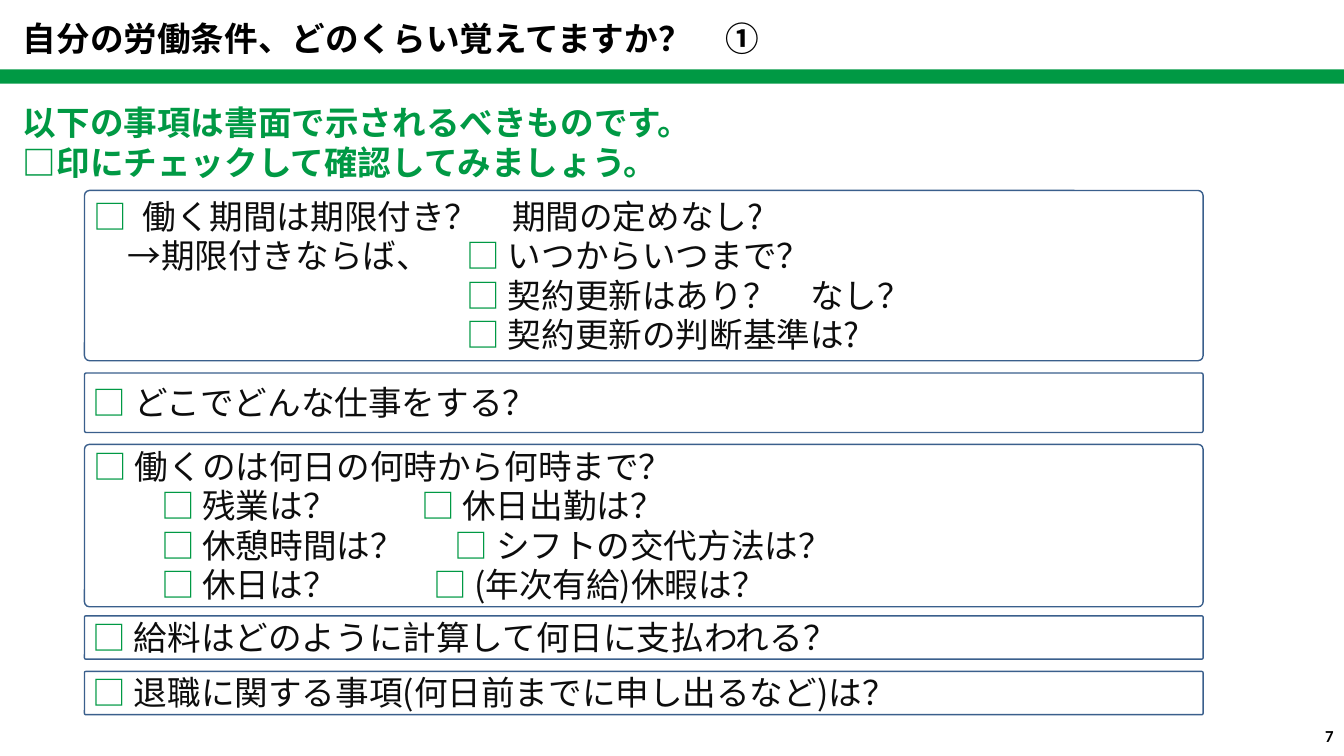
from dataclasses import dataclass

from lxml import etree
from pptx import Presentation
from pptx import util as u
from pptx.dml.color import RGBColor
from pptx.enum import shapes, text
from pptx.oxml import ns


@dataclass(frozen=True)
class Theme:
    green: RGBColor = RGBColor(0x00, 0x99, 0x44)
    ink: RGBColor = RGBColor(0x0D, 0x0D, 0x0D)
    black: RGBColor = RGBColor(0, 0, 0)
    white: RGBColor = RGBColor(255, 255, 255)
    edge: RGBColor = RGBColor(0x3A, 0x5F, 0x8C)
    font: str = "Noto Sans CJK JP"
    latin: str = "Calibri"
    body: u.Pt = u.Pt(24)
    small: u.Pt = u.Pt(12)
    line: u.Pt = u.Pt(28)


T = Theme()
BOX = "□"

# Each card: top, height, then lines as (text, tab stops in cm)
CARDS = [
    (4.8, 4.29, [
        ("□  働く期間は期限付き？　期間の定めなし?", []),
        ("\t→期限付きならば、\t□ いつからいつまで？", [0.85, 9.4]),
        ("\t□ 契約更新はあり？　なし？", [9.4]),
        ("\t□ 契約更新の判断基準は?", [9.4]),
    ]),
    (9.4, 1.5, [("□ どこでどんな仕事をする？", [])]),
    (11.2, 4.09, [
        ("□ 働くのは何日の何時から何時まで？", []),
        ("\t□ 残業は？\t□ 休日出勤は？", [1.7, 8.25]),
        ("\t□ 休憩時間は？\t□ シフトの交代方法は？", [1.7, 9.1]),
        ("\t□ 休日は？\t□ (年次有給)休暇は？", [1.7, 8.55]),
    ]),
    (15.52, 1.09, [("□ 給料はどのように計算して何日に支払われる？", [])]),
    (16.92, 1.09, [("□ 退職に関する事項(何日前までに申し出るなど)は？", [])]),
]


def style(para, color, size=T.body, name=T.font, bold=False):
    font = para.font
    font.size, font.name, font.bold = size, name, bold
    font.color.rgb = color
    base = para._p.pPr.find(ns.qn("a:defRPr"))
    etree.SubElement(base, ns.qn("a:ea"), typeface=name)
    return base


def shape(slide, kind, left, top, width, height, fill):
    item = slide.shapes.add_shape(
        kind, u.Cm(left), u.Cm(top), u.Cm(width), u.Cm(height))
    item.shadow.inherit = False
    item.fill.solid()
    item.fill.fore_color.rgb = fill
    item.line.fill.background()
    return item


def label(slide, left, top, width, height, lines, color, **look):
    frame = slide.shapes.add_textbox(
        u.Cm(left), u.Cm(top), u.Cm(width), u.Cm(height)).text_frame
    frame.word_wrap = True
    frame.text = "\n".join(lines)
    for para in frame.paragraphs:
        style(para, color, bold=True, **look)
    return frame


def check(para, line, stops):
    """Write one line with green check boxes and tab stops."""
    para.alignment = text.PP_ALIGN.LEFT
    para.line_spacing = T.line
    base = style(para, T.ink)
    if stops:
        tabs = etree.Element(ns.qn("a:tabLst"))
        for stop in stops:
            etree.SubElement(tabs, ns.qn("a:tab"), pos=str(u.Cm(stop)), algn="l")
        base.addprevious(tabs)
    for i, part in enumerate(line.split(BOX)):
        if i:
            mark = para.add_run()
            mark.text = BOX
            mark.font.color.rgb = T.green
        if part:
            run = para.add_run()
            run.text = part
            run.font.color.rgb = T.ink


def card(slide, top, height, lines):
    item = shape(slide, shapes.MSO_SHAPE.ROUNDED_RECTANGLE,
                 2.13, top, 28.19, height, T.white)
    item.adjustments[0] = 0.03
    item.line.color.rgb = T.edge
    item.line.width = u.Pt(1)
    frame = item.text_frame
    frame.word_wrap = True
    frame.vertical_anchor = text.MSO_ANCHOR.MIDDLE
    frame.margin_left = u.Cm(0.2)
    frame.margin_top = frame.margin_right = frame.margin_bottom = u.Cm(0.1)
    for i, (line, stops) in enumerate(lines):
        para = frame.add_paragraph() if i else frame.paragraphs[0]
        check(para, line, stops)


def main():
    deck = Presentation()
    deck.slide_width, deck.slide_height = u.Cm(33.87), u.Cm(19.05)
    slide = deck.slides.add_slide(deck.slide_layouts[6])

    # Title and green bar
    label(slide, 0.33, 0.33, 30, 1.27,
          ["自分の労働条件、どのくらい覚えてますか？　①"], T.black)
    shape(slide, shapes.MSO_SHAPE.RECTANGLE, 0, 1.75, 33.87, 0.36, T.green)

    # Lead text
    label(slide, 0.33, 2.44, 30, 2.31,
          ["以下の事項は書面で示されるべきものです。",
           "□印にチェックして確認してみましょう。"], T.green)

    # Checklist cards
    for top, height, lines in CARDS:
        card(slide, top, height, lines)

    # Page number
    page = label(slide, 25.96, 18.03, 7.9, 1.02, ["7"], T.black,
                 size=T.small, name=T.latin)
    page.vertical_anchor = text.MSO_ANCHOR.MIDDLE
    page.paragraphs[0].alignment = text.PP_ALIGN.RIGHT

    deck.save("out.pptx")


if __name__ == "__main__":
    main()
